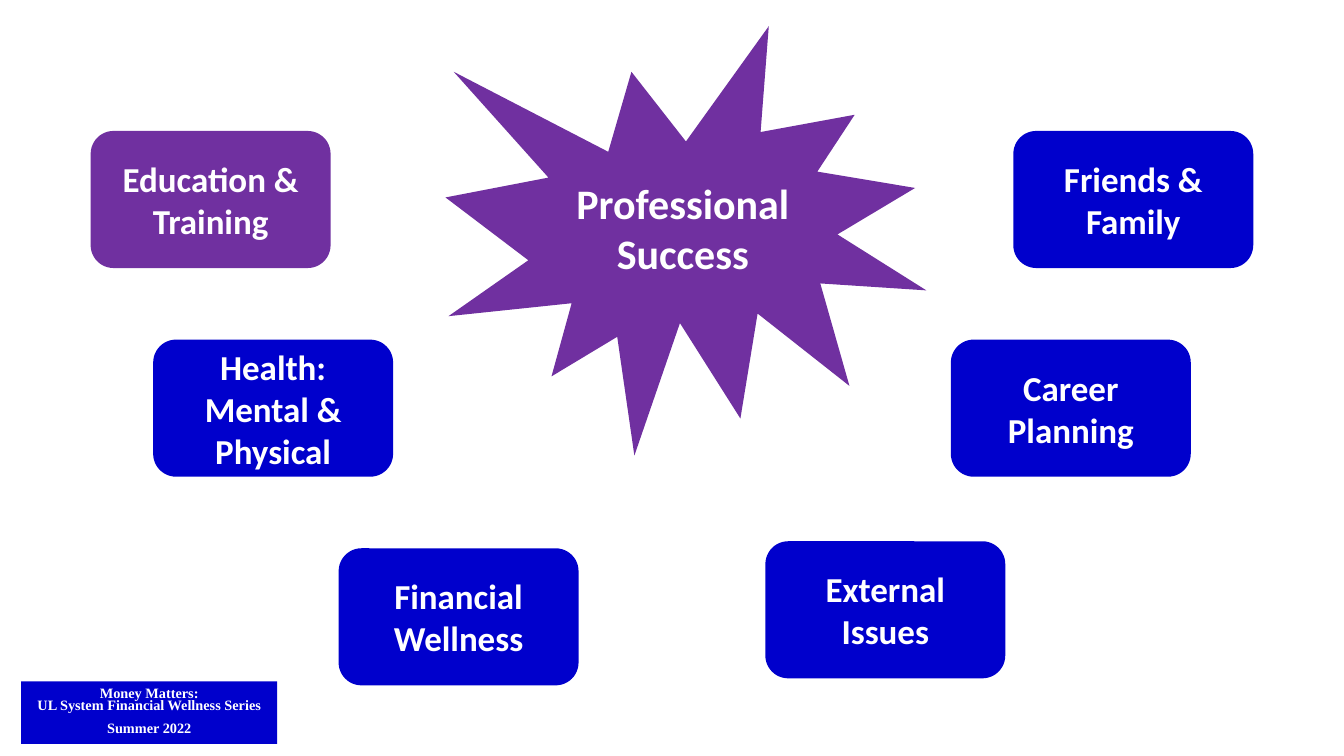
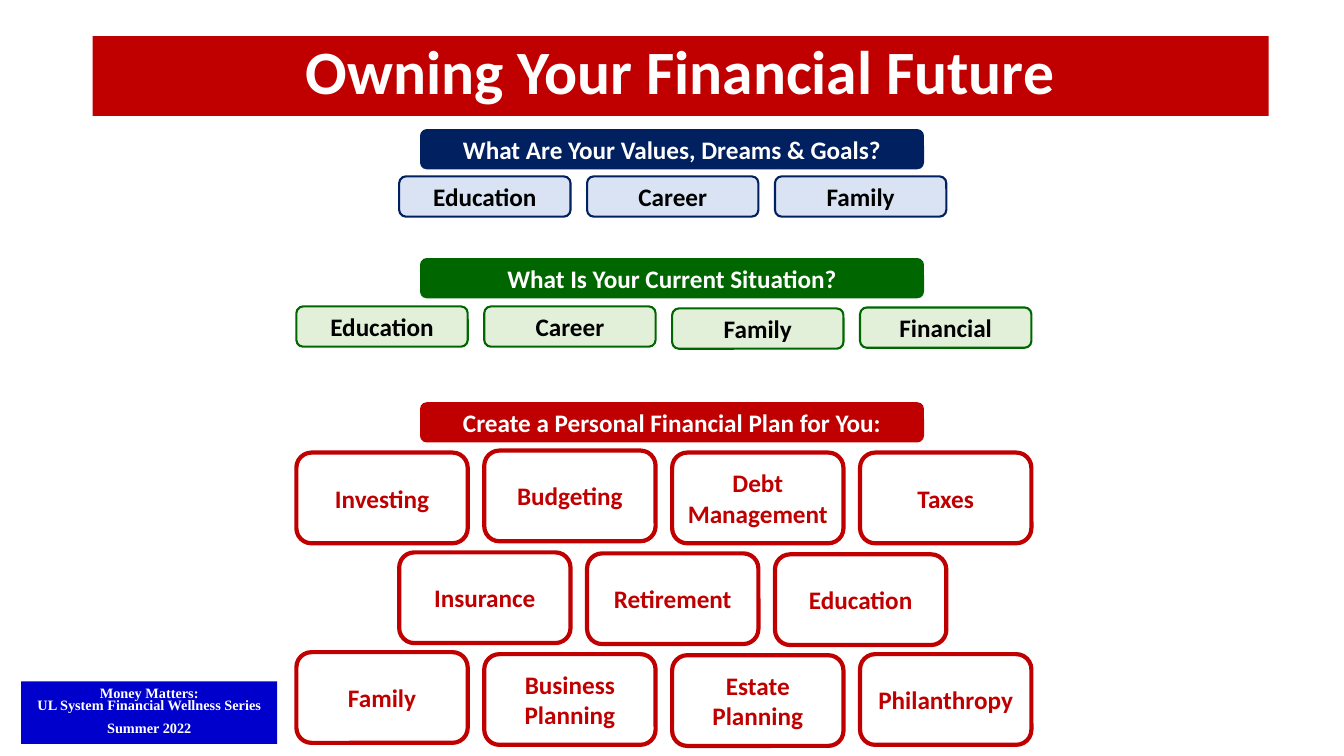
from dataclasses import dataclass

from pptx import Presentation
from pptx.dml.color import RGBColor
from pptx.enum.shapes import MSO_SHAPE
from pptx.enum.text import MSO_ANCHOR, PP_ALIGN
from pptx.util import Inches, Pt


@dataclass(frozen=True)
class Theme:
    """Colours, fonts and type sizes."""
    blue: str = "0000CC"
    purple: str = "7030A0"
    red: str = "C00000"
    navy: str = "002060"
    green: str = "006600"
    pale_blue: str = "DAE3F3"
    pale_green: str = "E2F0D9"
    white: str = "FFFFFF"
    black: str = "000000"
    body_font: str = "Calibri"
    footer_font: str = "Times New Roman"
    title_size: float = 44
    burst_size: float = 30
    topic_size: float = 25
    tile_size: float = 18
    footer_size: float = 10.2


class Deck:
    """Holds the style and the current slide; lengths are percent of the slide."""

    TOPIC_SIZE = (17.85, 18.13)
    BAND_SIZE = (37.5, 5.33)
    TILE_WIDTH, TILE_PITCH = 12.75, 13.98

    def __init__(self, theme):
        self.theme = theme
        self.presentation = Presentation()
        self.presentation.slide_width = Inches(13.33)
        self.presentation.slide_height = Inches(7.5)
        self.slide = None

    def new_slide(self):
        self.slide = self.presentation.slides.add_slide(
            self.presentation.slide_layouts[6])
        self.footer()

    def box(self, kind, place, lines, fill, size, color=None, line=None,
            font=None, anchor=MSO_ANCHOR.MIDDLE, spacing=None):
        """Draw a filled shape with bold centred text, one paragraph per line."""
        left, top, width, height = place
        across = self.presentation.slide_width / 100
        down = self.presentation.slide_height / 100
        shape = self.slide.shapes.add_shape(
            kind, int(left * across), int(top * down),
            int(width * across), int(height * down))
        shape.shadow.inherit = False
        shape.fill.solid()
        shape.fill.fore_color.rgb = RGBColor.from_string(fill)
        if line:
            line_color, line_width = line
            shape.line.color.rgb = RGBColor.from_string(line_color)
            shape.line.width = Pt(line_width)
        else:
            shape.line.fill.background()

        frame = shape.text_frame
        paragraph_format = {"alignment": PP_ALIGN.CENTER, "line_spacing": spacing}
        font_format = {"name": font or self.theme.body_font,
                       "size": Pt(size), "bold": True}
        frame.word_wrap = True
        frame.vertical_anchor = anchor
        for index, text in enumerate(lines):
            paragraph = frame.add_paragraph() if index else frame.paragraphs[0]
            run = paragraph.add_run()
            run.text = text
            for target, values in ((paragraph, paragraph_format),
                                   (run.font, font_format)):
                for name, value in values.items():
                    setattr(target, name, value)
            run.font.color.rgb = RGBColor.from_string(color or self.theme.white)
        return shape

    def footer(self):
        theme = self.theme
        shape = self.box(
            MSO_SHAPE.RECTANGLE, (1.58, 90.13, 19.05, 8.27),
            ["Money Matters:", "UL System Financial Wellness Series", "Summer 2022"],
            theme.blue, theme.footer_size, font=theme.footer_font, spacing=0.7)
        shape.text_frame.paragraphs[-1].space_before = Pt(8.2)

    def title(self, text):
        self.box(MSO_SHAPE.RECTANGLE, (6.9, 4.8, 87.5, 10.53), [text],
                 self.theme.red, self.theme.title_size,
                 anchor=MSO_ANCHOR.TOP, spacing=0.9)

    def burst(self, text):
        self.box(MSO_SHAPE.EXPLOSION1, (33.15, 3.47, 35.78, 56.8), [text],
                 self.theme.purple, self.theme.burst_size)

    def topic(self, left, top, text, fill):
        self.box(MSO_SHAPE.ROUNDED_RECTANGLE, (left, top, *self.TOPIC_SIZE),
                 [text], fill, self.theme.topic_size)

    def band(self, top, text, fill):
        width, height = self.BAND_SIZE
        self.box(MSO_SHAPE.ROUNDED_RECTANGLE,
                 ((100 - width) / 2, top, width, height),
                 [text], fill, self.theme.tile_size)

    def tile_row(self, left, height, tiles, fill, line, color):
        """Draw (text, top) tiles at an even pitch."""
        for column, (text, top) in enumerate(tiles):
            self.box(MSO_SHAPE.ROUNDED_RECTANGLE,
                     (left + column * self.TILE_PITCH, top, self.TILE_WIDTH, height),
                     [text], fill, self.theme.tile_size, color, line)


def success_slide(deck):
    theme = deck.theme
    deck.new_slide()
    deck.burst("Professional Success")

    # Topics in mirrored pairs: left edge, tops, texts, left fill
    pairs = [
        (6.75, (17.33, 17.33), ("Education & Training", "Friends & Family"), theme.purple),
        (11.4, (44.93, 44.93), ("Health: Mental & Physical", "Career Planning"), theme.blue),
        (25.2, (72.53, 71.6), ("Financial Wellness", "External Issues"), theme.blue),
    ]
    for left, tops, texts, left_fill in pairs:
        mirrored = 100 - left - deck.TOPIC_SIZE[0]
        deck.topic(left, tops[0], texts[0], left_fill)
        deck.topic(mirrored, tops[1], texts[1], theme.blue)


def future_slide(deck):
    theme = deck.theme
    deck.new_slide()
    deck.title("Owning Your Financial Future")
    four_left, three_left = 22.05, 29.7
    low, tall = 5.33, 12

    # Values and current situation
    deck.band(17.07, "What Are Your Values, Dreams & Goals?", theme.navy)
    deck.tile_row(three_left, low,
                  [("Education", 23.33), ("Career", 23.33), ("Family", 23.33)],
                  theme.pale_blue, (theme.navy, 1.5), theme.black)
    deck.band(34.13, "What Is Your Current Situation?", theme.green)
    deck.tile_row(four_left, low,
                  [("Education", 40.53), ("Career", 40.53),
                   ("Family", 40.8), ("Financial", 40.67)],
                  theme.pale_green, (theme.green, 1.5), theme.black)

    # Personal plan
    deck.band(53.2, "Create a Personal Financial Plan for You:", theme.red)
    plan_rows = [
        (four_left, [("Investing", 59.87), ("Budgeting", 59.6),
                     ("Debt Management", 59.87), ("Taxes", 59.87)]),
        (three_left, [("Insurance", 73.07), ("Retirement", 73.2),
                      ("Education", 73.33)]),
        (four_left, [("Family", 86.27), ("Business Planning", 86.53),
                     ("Estate Planning", 86.67), ("Philanthropy", 86.53)]),
    ]
    for left, tiles in plan_rows:
        deck.tile_row(left, tall, tiles, theme.white, (theme.red, 3), theme.red)


def main():
    deck = Deck(Theme())
    success_slide(deck)
    future_slide(deck)
    deck.presentation.save("out.pptx")


if __name__ == "__main__":
    main()
